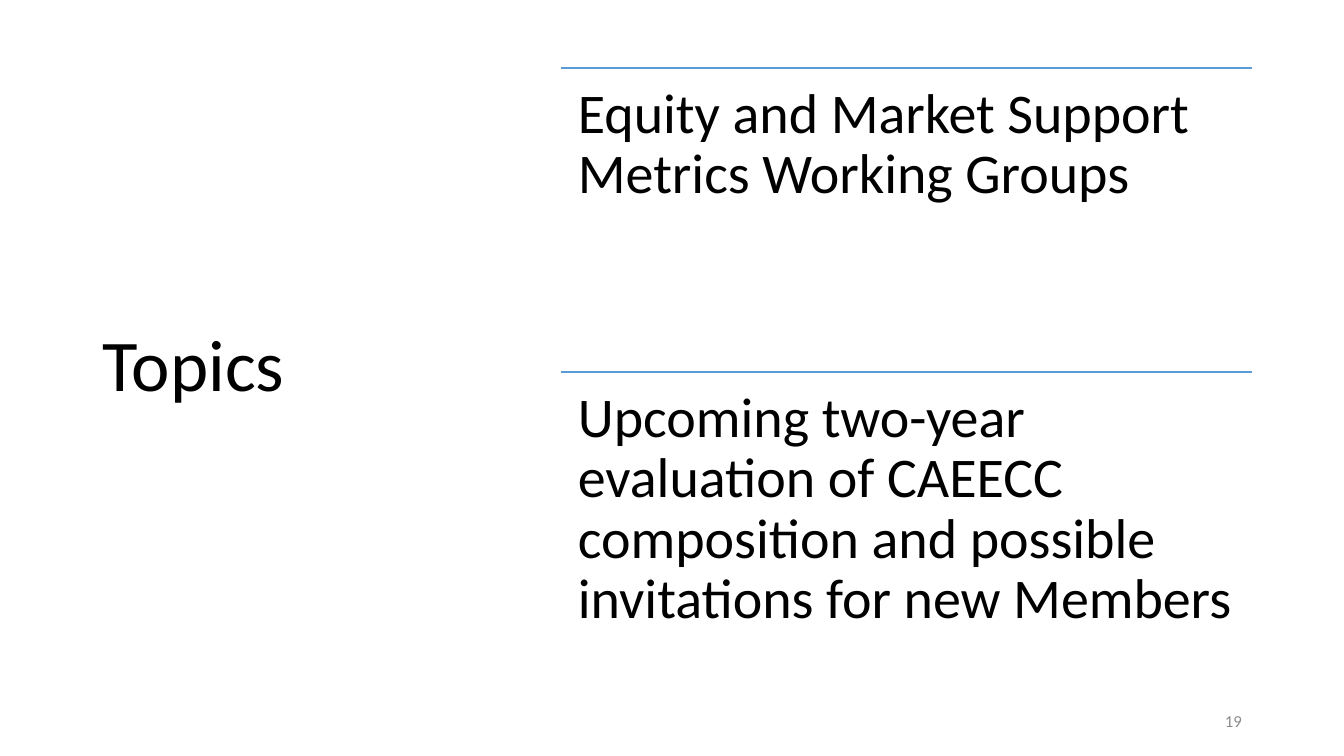
import pptx
import pptx.util
import pptx.dml.color
import pptx.enum.shapes
import pptx.enum.text
import pptx.oxml

ANCHOR = pptx.enum.text.MSO_ANCHOR
ALIGN = pptx.enum.text.PP_ALIGN
WIDTH, HEIGHT = 1344, 756

TOPICS = [
    "Equity and Market Support Metrics Working Groups",
    "Upcoming two-year evaluation of CAEECC composition "
    "and possible invitations for new Members",
]
TOPIC_LEFT, TOPIC_TOP, TOPIC_WIDTH, TOPIC_PITCH = 561, 68, 691, 304


def px(n):
    """Convert pixels (1344 across the slide) to EMU."""
    return pptx.util.Emu(round(n * 12192000 / WIDTH))


def rgb(value):
    return pptx.dml.color.RGBColor.from_string(value)


class Slide:
    font = "Calibri"
    ink = "000000"
    rule_color = "5B9BD5"

    def __init__(self, prs):
        self.s = prs.slides.add_slide(prs.slide_layouts[6])

    def text(self, text, box, size, color=None, inset=(10, 5), anchor=ANCHOR.TOP, **paragraph):
        """Add a text box; inset is (horizontal, vertical) in px."""
        sp = self.s.shapes.add_textbox(*map(px, box))
        tf = sp.text_frame
        across, down = map(px, inset)
        frame = {
            "word_wrap": True,
            "vertical_anchor": anchor,
            "margin_left": across,
            "margin_right": across,
            "margin_top": down,
            "margin_bottom": down,
        }
        for name, value in frame.items():
            setattr(tf, name, value)
        p = tf.paragraphs[0]
        for name, value in paragraph.items():
            setattr(p, name, value)
        r = p.add_run()
        r.text = text
        for name, value in {"name": self.font, "size": pptx.util.Pt(size)}.items():
            setattr(r.font, name, value)
        r.font.color.rgb = rgb(color or self.ink)

    def rule(self, left, top, width):
        line = self.s.shapes.add_connector(
            pptx.enum.shapes.MSO_CONNECTOR.STRAIGHT,
            px(left), px(top), px(left + width), px(top))
        line.line.color.rgb = rgb(self.rule_color)
        line.line.width = pptx.util.Pt(1)
        line._element.spPr.append(pptx.oxml.parse_xml(
            '<a:effectLst xmlns:a="http://schemas.openxmlformats.org/drawingml/2006/main"/>'))

    def topic(self, text, top):
        self.rule(TOPIC_LEFT, top, TOPIC_WIDTH)
        self.text(text, (TOPIC_LEFT, top, TOPIC_WIDTH, TOPIC_PITCH), 40,
                  inset=(17, 17), line_spacing=0.9)


def main():
    prs = pptx.Presentation()
    prs.slide_width, prs.slide_height = px(WIDTH), px(HEIGHT)
    slide = Slide(prs)
    slide.text("Topics", (93, 61, 372, 614), 52, anchor=ANCHOR.MIDDLE, line_spacing=0.9)
    for i, topic in enumerate(TOPICS):
        slide.topic(topic, TOPIC_TOP + i * TOPIC_PITCH)
    slide.text("19", (950, 701, 302, 40), 12, "8C8C8C",
               anchor=ANCHOR.MIDDLE, alignment=ALIGN.RIGHT)
    prs.save("out.pptx")


if __name__ == "__main__":
    main()
